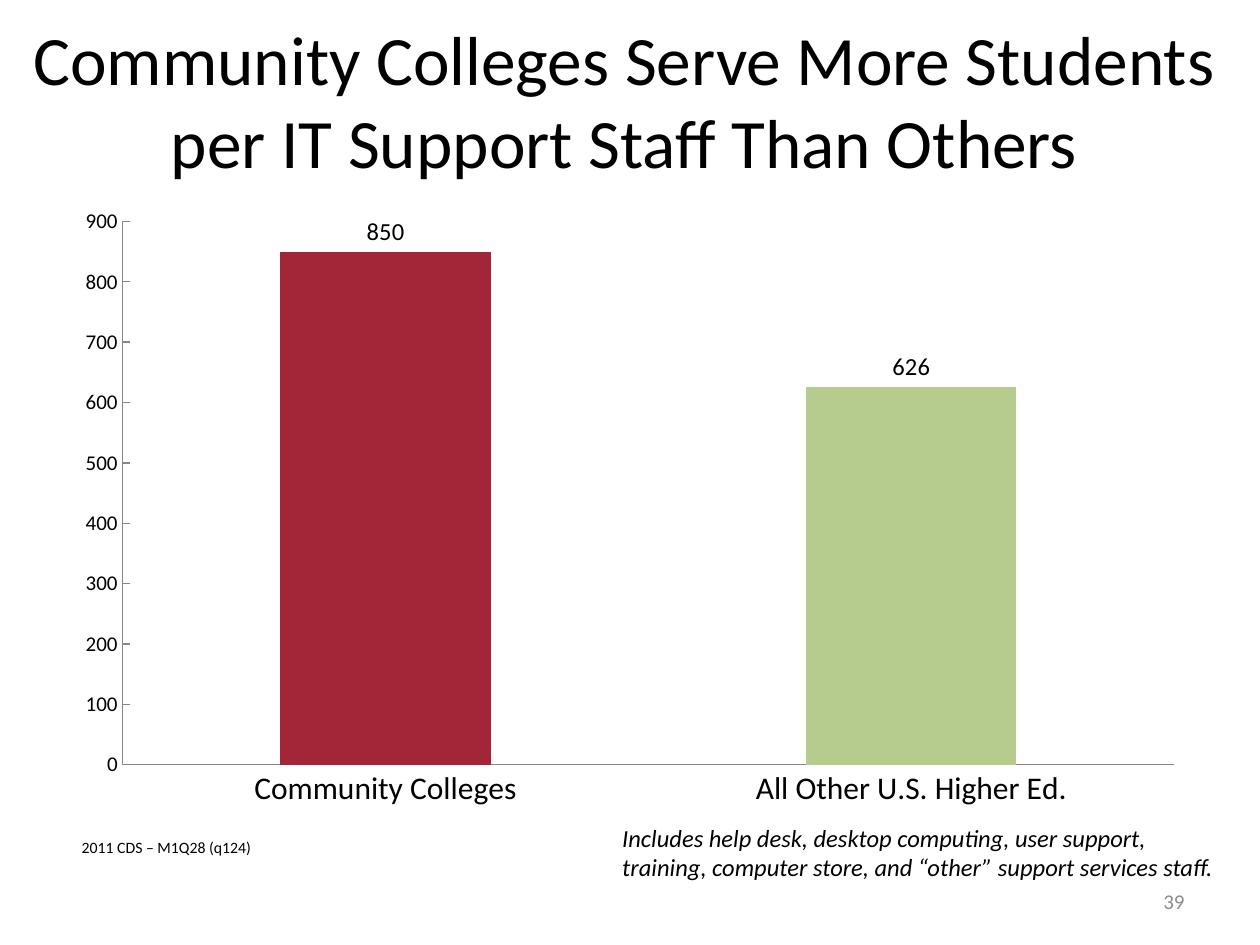
from pptx import Presentation
from pptx.chart.data import CategoryChartData
from pptx.dml.color import RGBColor
from pptx.enum.chart import XL_CHART_TYPE as ChartType, XL_LABEL_POSITION as LabelPosition, XL_TICK_MARK as TickMark
from pptx.enum.text import MSO_ANCHOR as Anchor, PP_ALIGN as Align
from pptx.util import Inches, Pt

TITLE = "Community Colleges Serve More Students per IT Support Staff Than Others"
STUDENTS_PER_STAFF = [
    ("Community Colleges", 850, "crimson"),
    ("All Other U.S. Higher Ed.", 626, "sage"),
]
SOURCE = "2011 CDS – M1Q28 (q124)"
NOTE = "Includes help desk, desktop computing, user support, training, computer store, and “other” support services staff."
PAGE_NUMBER = "39"

FONT = "Calibri"
COLORS = {"text": "000000", "muted": "8C8C8C", "axis": "868686", "crimson": "A32638", "sage": "B5CC8E"}
WIDTH, HEIGHT = 10, 7.5
MARGIN = WIDTH / 20


def color(name):
    return RGBColor.from_string(COLORS[name])


def style_font(font, size, name="text", italic=False):
    font.name = FONT
    font.size = Pt(size)
    font.italic = italic
    font.color.rgb = color(name)


def write(box, text, size, name="text", align=Align.LEFT, anchor=Anchor.TOP, italic=False):
    frame = box.text_frame
    frame.word_wrap = True
    frame.vertical_anchor = anchor
    para = frame.paragraphs[0]
    para.alignment = align
    span = para.add_run()
    span.text = text
    style_font(span.font, size, name, italic)


def add_text(page, left, top, width, height, *content, **options):
    box = page.shapes.add_textbox(Inches(left), Inches(top), Inches(width), Inches(height))
    write(box, *content, **options)


def add_column_chart(page, left, top, width, height):
    data = CategoryChartData()
    data.categories = [label for label, _, _ in STUDENTS_PER_STAFF]
    data.add_series("Series 1", [value for _, value, _ in STUDENTS_PER_STAFF])
    chart = page.shapes.add_chart(
        ChartType.COLUMN_CLUSTERED, Inches(left), Inches(top), Inches(width), Inches(height), data
    ).chart
    chart.has_legend = False
    chart.has_title = False
    style_font(chart.font, 18)

    plot = chart.plots[0]
    plot.gap_width = 150
    plot.vary_by_categories = False
    plot.has_data_labels = True
    labels = plot.data_labels
    labels.show_value = True
    labels.position = LabelPosition.OUTSIDE_END
    style_font(labels.font, 14)

    series = plot.series[0]
    series.format.fill.solid()
    series.format.fill.fore_color.rgb = color(STUDENTS_PER_STAFF[0][2])
    for index, (_, _, fill_name) in enumerate(STUDENTS_PER_STAFF[1:], 1):
        fill = series.points[index].format.fill
        fill.solid()
        fill.fore_color.rgb = color(fill_name)

    axes = [(chart.category_axis, TickMark.NONE, 18), (chart.value_axis, TickMark.INSIDE, 12)]
    for axis, tick, size in axes:
        axis.has_major_gridlines = False
        axis.major_tick_mark = tick
        axis.minor_tick_mark = TickMark.NONE
        axis.format.line.color.rgb = color("axis")
        axis.format.line.width = Pt(0.75)
        style_font(axis.tick_labels.font, size)
    chart.value_axis.minimum_scale = 0
    chart.value_axis.maximum_scale = 900
    chart.value_axis.major_unit = 100


def main():
    deck = Presentation()
    deck.slide_width, deck.slide_height = Inches(WIDTH), Inches(HEIGHT)
    page = deck.slides.add_slide(deck.slide_layouts[5])

    title = page.shapes.title
    title.left, title.top = Inches(0), Inches(0.16)
    title.width, title.height = Inches(9.91), Inches(HEIGHT / 6)
    write(title, TITLE, 39.6, align=Align.CENTER, anchor=Anchor.MIDDLE)

    add_column_chart(page, MARGIN, 1.56, WIDTH - 2 * MARGIN, 4.95)
    add_text(page, 0.55, 6.6, 3.05, 0.25, SOURCE, 9)
    add_text(page, 4.84, 6.48, WIDTH / 2, 0.57, NOTE, 14, italic=True)
    number_width = 2.33
    add_text(page, WIDTH - MARGIN - number_width, 6.95, number_width, 0.4,
             PAGE_NUMBER, 12, "muted", align=Align.RIGHT, anchor=Anchor.MIDDLE)

    deck.save("out.pptx")


if __name__ == "__main__":
    main()
